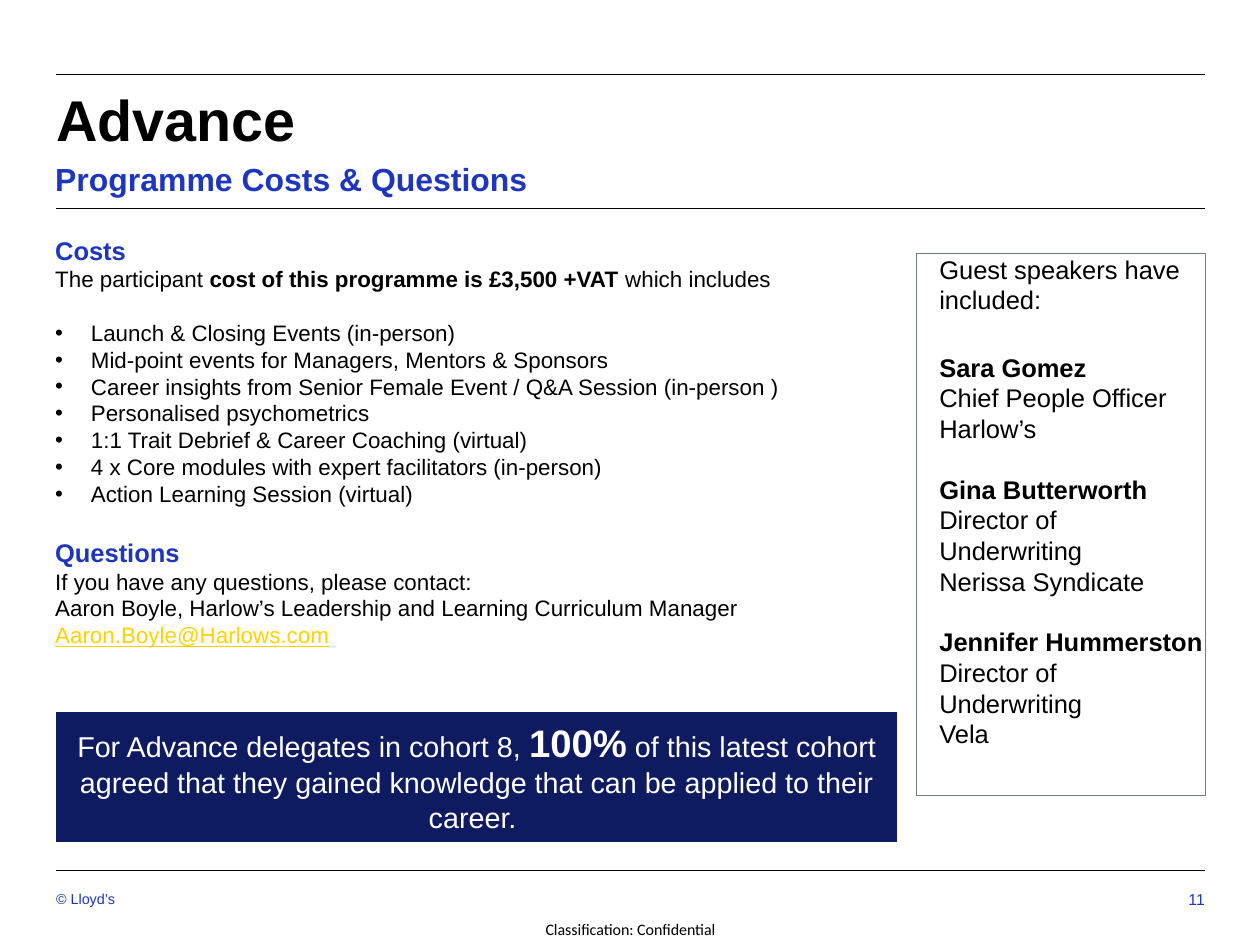
from lxml import etree
from pptx import Presentation
from pptx.dml.color import RGBColor
from pptx.enum.shapes import MSO_CONNECTOR as Connector, MSO_SHAPE as Shape
from pptx.enum.text import MSO_ANCHOR as Anchor, MSO_AUTO_SIZE as AutoSize, PP_ALIGN as Align
from pptx.oxml.ns import qn
from pptx.util import Cm, Pt

BLACK = RGBColor(0x00, 0x00, 0x00)
WHITE = RGBColor(0xFF, 0xFF, 0xFF)
BLUE = RGBColor(0x1E, 0x35, 0xBF)
NAVY = RGBColor(0x0F, 0x1B, 0x60)
YELLOW = RGBColor(0xFF, 0xD2, 0x00)
GREY = RGBColor(0x71, 0x7C, 0x7C)

LEFT, RIGHT = 1.24, 26.64
RULE_HEIGHTS = (1.65, 4.6, 19.25)

HEADING = {"size": 16, "color": BLUE, "bold": True}
PLAIN = {"size": 14}
STRONG = {"size": 14, "bold": True}
LINK = {"size": 14, "color": YELLOW, "underline": True}
SIDE = {"size": 16}
SIDE_NAME = {"size": 16, "bold": True}
BANNER = {"size": 18, "color": WHITE}

INCLUDED = (
    "Launch & Closing Events (in-person)",
    "Mid-point events for Managers, Mentors & Sponsors",
    "Career insights from Senior Female Event / Q&A Session (in-person )",
    "Personalised psychometrics",
    "1:1 Trait Debrief & Career Coaching (virtual)",
    "4 x Core modules with expert facilitators (in-person)",
    "Action Learning Session (virtual)",
)
CONTACT = (
    ("If you have any questions, please contact:", PLAIN),
    ("Aaron Boyle, Harlow’s Leadership and Learning Curriculum Manager", PLAIN),
    ("Aaron.Boyle@Harlows.com", LINK),
)
SPEAKERS = (
    ("Sara Gomez", "Chief People Officer", "Harlow’s"),
    ("Gina Butterworth", "Director of Underwriting", "Nerissa Syndicate"),
    ("Jennifer Hummerston", "Director of Underwriting", "Vela"),
)


def place(shape, left, top, width, height):
    """Move and size a shape, in centimetres."""
    values = {"left": left, "top": top, "width": width, "height": height}
    for name, value in values.items():
        setattr(shape, name, Cm(value))


def set_frame(shape, anchor=Anchor.TOP, insets=(0, 0, 0, 0)):
    """Set wrapping, anchor and left, top, right, bottom insets."""
    frame = shape.text_frame
    values = {"word_wrap": True, "auto_size": AutoSize.NONE, "vertical_anchor": anchor}
    sides = ("margin_left", "margin_top", "margin_right", "margin_bottom")
    values.update(zip(sides, map(Cm, insets)))
    for name, value in values.items():
        setattr(frame, name, value)
    return frame


def add_span(para, text, size, color=BLACK, bold=False, underline=False, name="Arial"):
    """Add a formatted run to a paragraph."""
    span = para.add_run()
    span.text = text
    values = {"name": name, "size": Pt(size), "bold": bold, "underline": underline}
    for key, value in values.items():
        setattr(span.font, key, value)
    span.font.color.rgb = color


def add_para(frame, *spans, before=0, after=0, align=Align.LEFT, spacing=None,
             indent=0, hanging=0, bullet=None):
    """Add a paragraph of (text, style) spans."""
    first = frame.paragraphs[0]
    para = first if not first.runs else frame.add_paragraph()
    properties = para._p.get_or_add_pPr()
    properties.set("marL", str(Cm(indent)))
    properties.set("indent", str(Cm(-hanging)))
    if bullet:
        etree.SubElement(properties, qn("a:buChar")).set("char", bullet)
    else:
        etree.SubElement(properties, qn("a:buNone"))
    values = {"space_before": Pt(before), "space_after": Pt(after),
              "alignment": align, "line_spacing": spacing}
    for name, value in values.items():
        setattr(para, name, value)
    for text, style in spans:
        add_span(para, text, **style)


def add_rule(page, height):
    """Draw a thin rule across the page."""
    rule = page.shapes.add_connector(
        Connector.STRAIGHT, Cm(LEFT), Cm(height), Cm(RIGHT), Cm(height))
    rule.line.color.rgb = BLACK
    rule.line.width = Pt(0.5)
    etree.SubElement(rule._element.spPr, qn("a:effectLst"))


def add_label(page, area, text, style, align, inset=0):
    """Add a one-line text box."""
    box = page.shapes.add_textbox(*map(Cm, area))
    frame = set_frame(box, Anchor.MIDDLE, (0, inset, 0, inset))
    add_para(frame, (text, style), align=align)


def fill_title(title):
    """Write the page title."""
    place(title, LEFT, 1.42, RIGHT - LEFT, 3.2)
    frame = set_frame(title, insets=(0, 0.61, 0, 0.2))
    add_para(frame, ("Advance", {"size": 36, "bold": True}), spacing=0.9)


def fill_costs(body):
    """Write the costs and the contact details."""
    place(body, 1.22, 3.43, 18.92, 15.65)
    frame = set_frame(body, insets=(0, 0.1, 0, 0))
    subtitle = {"size": 20, "color": BLUE, "bold": True}
    add_para(frame, ("Programme Costs & Questions", subtitle), after=4)
    add_para(frame, ("Costs", HEADING), before=19)
    add_para(frame, ("The participant ", PLAIN),
             ("cost of this programme is £3,500 +VAT ", STRONG),
             ("which includes", PLAIN), after=17)
    for item in INCLUDED:
        add_para(frame, (item, PLAIN), indent=0.79, hanging=0.79, bullet="•")
    add_para(frame, ("Questions", HEADING), before=19)
    for line in CONTACT:
        add_para(frame, line)


def fill_speakers(body):
    """Write the outlined list of guest speakers."""
    place(body, 20.27, 5.61, 6.38, 11.99)
    body.line.color.rgb = GREY
    body.line.width = Pt(0.75)
    frame = set_frame(body)
    add_para(frame, ("Guest speakers have included:", SIDE), after=4, indent=0.5)
    for name, *details in SPEAKERS:
        add_para(frame, (name, SIDE_NAME), before=19, indent=0.5)
        for detail in details:
            add_para(frame, (detail, SIDE), indent=0.5)


def add_banner(page):
    """Add the filled banner with the cohort result."""
    banner = page.shapes.add_shape(Shape.RECTANGLE, *map(Cm, (1.22, 15.72, 18.64, 2.92)))
    banner.shadow.inherit = False
    banner.fill.solid()
    banner.fill.fore_color.rgb = NAVY
    banner.line.color.rgb = WHITE
    banner.line.width = Pt(1)
    frame = set_frame(banner, Anchor.MIDDLE, (0.25, 0.13, 0.25, 0.13))
    add_para(frame, ("For Advance delegates in cohort 8, ", BANNER),
             ("100%", {"size": 24, "color": WHITE, "bold": True}),
             (" of this latest cohort agreed that they gained knowledge "
              "that can be applied to their career. ", BANNER), align=Align.CENTER)


def main():
    """Build and save the deck."""
    deck = Presentation()
    deck.slide_width, deck.slide_height = Cm(27.86), Cm(20.9)
    page = deck.slides.add_slide(deck.slide_layouts[3])
    title, costs, speakers = page.placeholders
    for height in RULE_HEIGHTS:
        add_rule(page, height)
    fill_title(title)
    fill_costs(costs)
    fill_speakers(speakers)
    add_banner(page)
    add_label(page, (LEFT, 19.56, 9.4, 0.64), "© Lloyd’s",
              {"size": 9, "color": BLUE}, Align.LEFT, 0.13)
    add_label(page, (20.37, 19.51, 6.27, 0.76), "11",
              {"size": 9.9, "color": BLUE}, Align.RIGHT, 0.1)
    add_label(page, (11.63, 20.17, 4.62, 0.74), "Classification: Confidential",
              {"size": 10, "name": "Calibri"}, Align.CENTER)
    deck.save("out.pptx")


if __name__ == "__main__":
    main()
